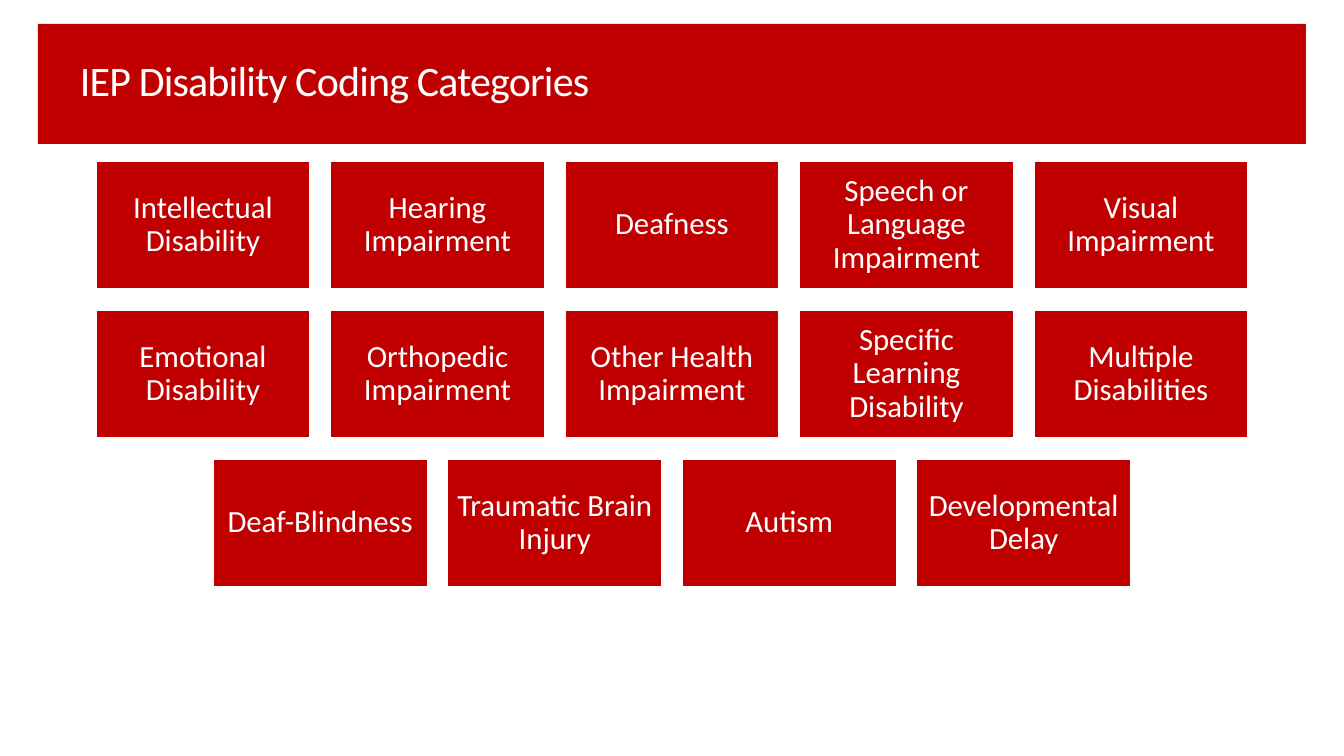
from pptx import Presentation
from pptx.dml.color import RGBColor
from pptx.enum.shapes import MSO_SHAPE
from pptx.enum.text import MSO_ANCHOR, PP_ALIGN
from pptx.util import Emu, Pt

RECTANGLE = MSO_SHAPE.RECTANGLE
MIDDLE = MSO_ANCHOR.MIDDLE
LEFT = PP_ALIGN.LEFT
CENTER = PP_ALIGN.CENTER

RED = RGBColor(0xC0, 0x00, 0x00)
WHITE = RGBColor(0xFF, 0xFF, 0xFF)
FONT = "Calibri"

PX_PER_INCH = 100.8
SLIDE_WIDTH, SLIDE_HEIGHT = 1344, 756
CARD_WIDTH, CARD_HEIGHT = 214, 128
GRID_WIDTH, GRID_TOP = 1152, 161
ROW_PITCH = 149
CARD_INSET = 9

CATEGORY_ROWS = [
    ["Intellectual Disability", "Hearing Impairment", "Deafness",
     "Speech or Language Impairment", "Visual Impairment"],
    ["Emotional Disability", "Orthopedic Impairment", "Other Health Impairment",
     "Specific Learning Disability", "Multiple Disabilities"],
    ["Deaf-Blindness", "Traumatic Brain Injury", "Autism", "Developmental Delay"],
]


def px(length):
    return Emu(round(length * 914400 / PX_PER_INCH))


def add_red_box(page, left, top, width, height):
    box = page.shapes.add_shape(RECTANGLE, px(left), px(top), px(width), px(height))
    box.shadow.inherit = False
    box.fill.solid()
    box.fill.fore_color.rgb = RED
    box.line.fill.background()
    return box


def write_text(box, text, size, align):
    frame = box.text_frame
    frame.word_wrap = True
    frame.vertical_anchor = MIDDLE
    para = frame.paragraphs[0]
    para.alignment = align
    para.line_spacing = 0.9
    span = para.add_run()
    span.text = text
    span.font.name = FONT
    span.font.size = Pt(size)
    span.font.color.rgb = WHITE
    return span


def add_title(page, text):
    add_red_box(page, 38, 24, 1268, 120)
    box = page.shapes.add_textbox(px(70), px(33), px(1163), px(100))
    span = write_text(box, text, 30, LEFT)
    span.font._element.set("spc", "-60")


def add_card(page, left, top, text):
    box = add_red_box(page, left, top, CARD_WIDTH, CARD_HEIGHT)
    box.line.color.rgb = WHITE
    box.line.width = Pt(0.85)
    frame = box.text_frame
    frame.margin_left = frame.margin_right = px(CARD_INSET)
    frame.margin_top = frame.margin_bottom = px(CARD_INSET)
    write_text(box, text, 22, CENTER)


def add_card_grid(page, rows):
    pitch = (GRID_WIDTH - CARD_WIDTH) / (len(rows[0]) - 1)
    for row_index, row in enumerate(rows):
        row_width = pitch * (len(row) - 1) + CARD_WIDTH
        left = (SLIDE_WIDTH - row_width) / 2
        top = GRID_TOP + row_index * ROW_PITCH
        for column, category in enumerate(row):
            add_card(page, left + column * pitch, top, category)


def main():
    deck = Presentation()
    deck.slide_width = px(SLIDE_WIDTH)
    deck.slide_height = px(SLIDE_HEIGHT)
    page = deck.slides.add_slide(deck.slide_layouts[6])
    add_title(page, "IEP Disability Coding Categories")
    add_card_grid(page, CATEGORY_ROWS)
    deck.save("out.pptx")


if __name__ == "__main__":
    main()
